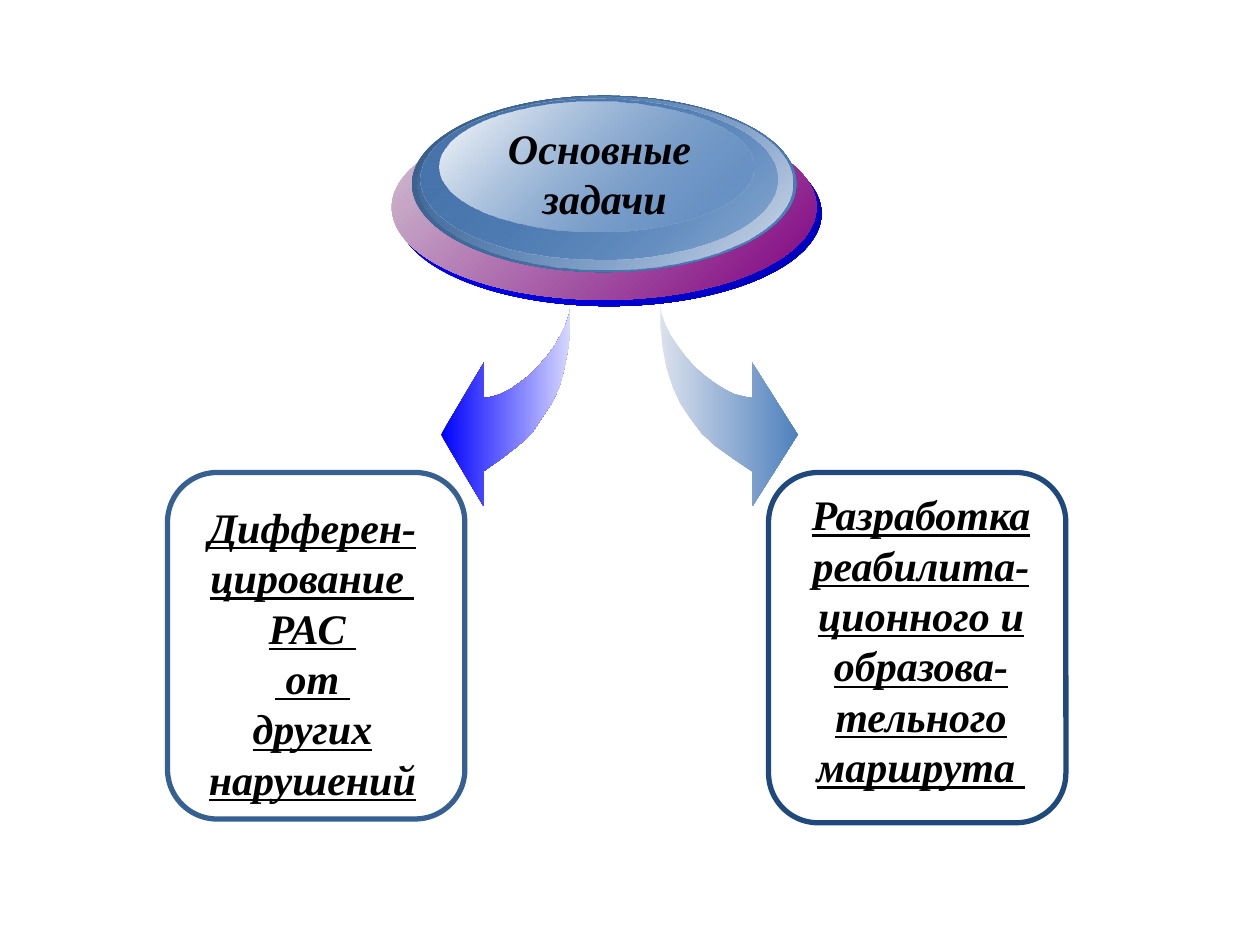
from pptx import Presentation
from pptx.dml.color import RGBColor
from pptx.enum.shapes import MSO_SHAPE
from pptx.enum.text import MSO_AUTO_SIZE, PP_ALIGN
from pptx.oxml.ns import qn
from pptx.util import Pt
from lxml.etree import SubElement

PX = 9144
BLACK = RGBColor(0x00, 0x00, 0x00)
WHITE = RGBColor(0xFF, 0xFF, 0xFF)
BLUE = RGBColor(0x00, 0x00, 0xFF)
DEEP_BLUE = RGBColor(0x00, 0x00, 0xBA)
PALE_BLUE = RGBColor(0xD8, 0xD8, 0xFF)
PALE_MAUVE = RGBColor(0xD3, 0xC6, 0xD3)
PURPLE = RGBColor(0x80, 0x00, 0x80)
STEEL = RGBColor(0x4F, 0x81, 0xBD)
STEEL_MID = RGBColor(0x47, 0x75, 0xAB)
STEEL_DARK = RGBColor(0x39, 0x5C, 0x87)
STEEL_PALE = RGBColor(0xD7, 0xDE, 0xEB)
ARROW_PALE = RGBColor(0xDB, 0xE1, 0xED)
NAVY = RGBColor(0x1F, 0x49, 0x7D)
FRAME_BLUE = RGBColor(0x37, 0x60, 0x92)

ARROW_SIZE = (109, 161)
ARROW_OUTLINE = [
    (0, 0), (0, 18), (2, 35), (5, 51), (10, 66), (16, 79), (24, 91), (33, 103),
    (44, 113), (58, 123), (73, 133), (73, 161), (109, 104), (73, 47), (73, 75),
    (67, 74), (59, 72), (51, 68), (43, 63), (35, 57), (27, 50), (20, 42),
    (14, 34), (8, 25), (4, 17), (1, 8),
]
MEDALLION_RINGS = [
    ((4, 20, 337, 147), (BLUE, 100), (DEEP_BLUE, 100)),
    ((0, 15, 337, 147), (PALE_MAUVE, 100), (PURPLE, 100)),
    ((16, 0, 305, 140), (STEEL_DARK, 100), (STEEL, 100)),
    ((20, 1, 298, 137), (STEEL, 0), (STEEL_PALE, 100)),
    ((23, 2, 283, 128), (STEEL_MID, 100), (STEEL, 48)),
    ((38, 5, 249, 103), (WHITE, 100), (STEEL, 38)),
]


def emu(*lengths):
    """Turn px lengths into EMU."""
    return [round(length * PX) for length in lengths]


def paint_gradient(shape, start, end, angle=0):
    """Fill a shape with a two-stop gradient of (colour, opacity) pairs."""
    shape.shadow.inherit = False
    shape.line.fill.background()
    shape.fill.gradient()
    shape.fill.gradient_angle = angle
    for stop, position, (colour, opacity) in zip(shape.fill.gradient_stops, (0, 1), (start, end)):
        stop.position = position
        stop.color.rgb = colour
    gradient = shape.fill._xPr.find(qn("a:gradFill"))
    for colour_node, (_, opacity) in zip(gradient.iter(qn("a:srgbClr")), (start, end)):
        if opacity < 100:
            SubElement(colour_node, qn("a:alpha"), val=str(opacity * 1000))


def add_text(slide, box, lines, *, size=24, colour=BLACK, underline=False):
    """Write centred bold italic paragraphs in a box."""
    frame = slide.shapes.add_textbox(*emu(*box)).text_frame
    frame.word_wrap = True
    frame.auto_size = MSO_AUTO_SIZE.SHAPE_TO_FIT_TEXT
    for index, line in enumerate(lines):
        paragraph = frame.paragraphs[0] if index == 0 else frame.add_paragraph()
        paragraph.alignment = PP_ALIGN.CENTER
        run = paragraph.add_run()
        run.text = line
        font = run.font
        font.name, font.size = "Times New Roman", Pt(size)
        font.bold = font.italic = True
        font.underline = underline
        font.color.rgb = colour


def add_medallion(slide, box, lines):
    """Stack the gradient ellipses and write the heading on them."""
    left, top, _, _ = box
    for (x, y, width, height), start, end in MEDALLION_RINGS:
        ring = slide.shapes.add_shape(
            MSO_SHAPE.OVAL, *emu(left + x, top + y, width, height))
        paint_gradient(ring, start, end, angle=315)
    add_text(slide, (left + 55, top + 16, 228, 91), lines)


def add_curved_arrow(slide, box, start, end, mirrored=False):
    """Draw a curved arrow that fills the box, pointing right unless mirrored."""
    left, top, width, height = box
    points = []
    for x, y in ARROW_OUTLINE:
        across = x / ARROW_SIZE[0]
        across = 1 - across if mirrored else across
        points.append((left + across * width, top + y / ARROW_SIZE[1] * height))
    builder = slide.shapes.build_freeform(*points[0], scale=PX)
    builder.add_line_segments(points[1:], close=True)
    paint_gradient(builder.convert_to_shape(), (start, 100), (end, 100))


def add_task_frame(slide, box, colour):
    """Draw the rounded outline of a task."""
    frame = slide.shapes.add_shape(MSO_SHAPE.ROUNDED_RECTANGLE, *emu(*box))
    frame.shadow.inherit = False
    frame.fill.background()
    frame.line.color.rgb = colour
    frame.line.width = Pt(3)


def add_task(slide, box, colour, text_offset, lines):
    """Draw a task frame with its underlined text."""
    add_task_frame(slide, box, colour)
    left, top = box[0] + text_offset[0], box[1] + text_offset[1]
    add_text(slide, (left, top, 210, 252), lines, underline=True)


def main():
    """Build the slide of main tasks."""
    deck = Presentation()
    deck.slide_width, deck.slide_height = emu(1000, 750)
    slide = deck.slides.add_slide(deck.slide_layouts[6])
    add_task(slide, (133, 375, 236, 275), FRAME_BLUE, (10, 18),
             ["Дифферен-", "цирование ", "РАС ", " от ", "других нарушений"])
    add_task(slide, (610, 375, 236, 278), NAVY, (16, 8),
             ["Разработка реабилита-", "ционного и образова-", "тельного маршрута "])
    add_curved_arrow(slide, (350, 241, 103, 161), BLUE, PALE_BLUE, mirrored=True)
    add_curved_arrow(slide, (524, 241, 109, 161), ARROW_PALE, STEEL)
    add_medallion(slide, (311, 76, 341, 167), ["Основные ", "задачи"])
    deck.save("out.pptx")


if __name__ == "__main__":
    main()
